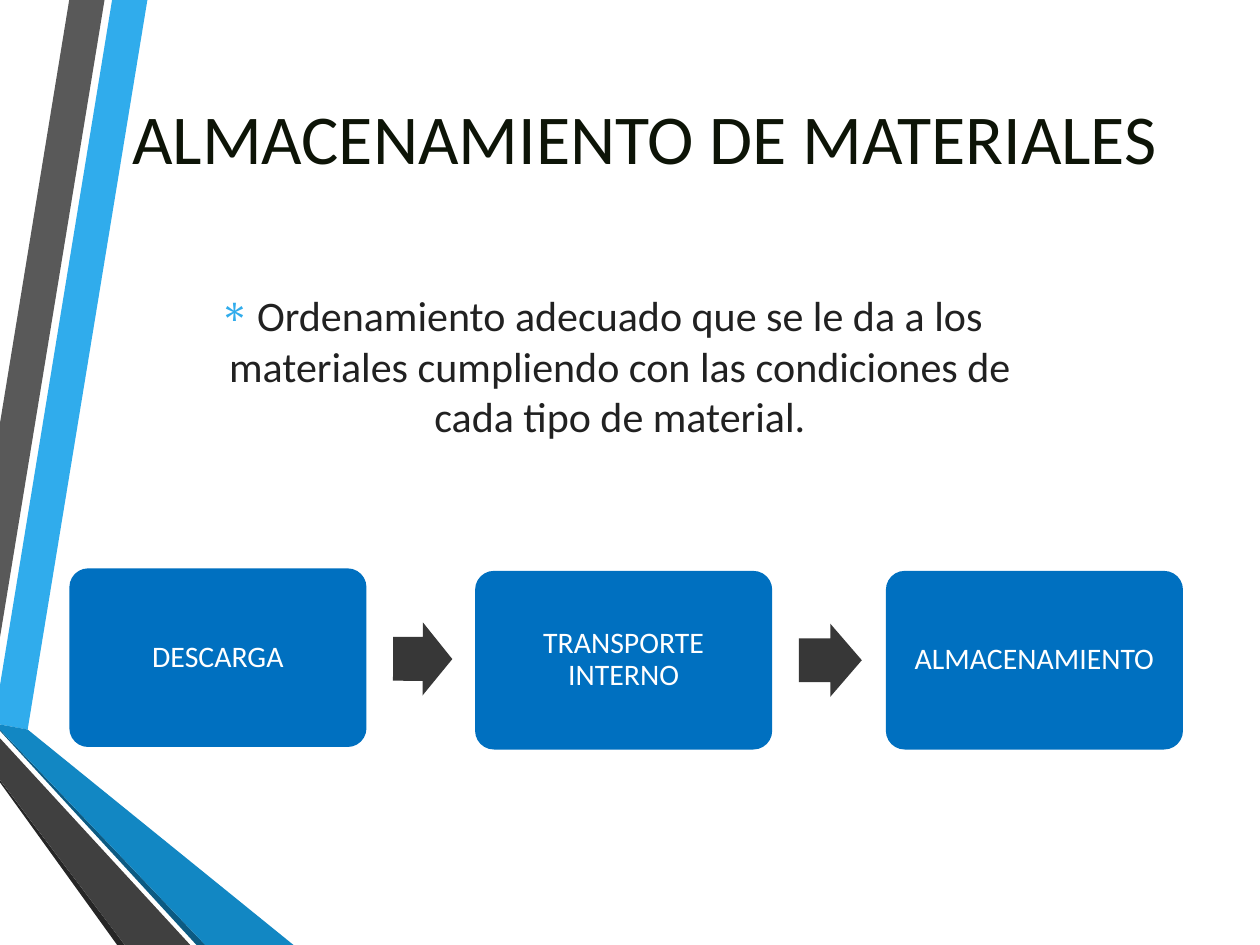
from dataclasses import dataclass

from lxml import etree
from pptx import Presentation
from pptx.dml.color import RGBColor
from pptx.enum.shapes import MSO_SHAPE
from pptx.enum.text import MSO_ANCHOR, PP_ALIGN
from pptx.oxml.ns import qn
from pptx.util import Inches, Pt

ROUNDED = MSO_SHAPE.ROUNDED_RECTANGLE
RIGHT_ARROW = MSO_SHAPE.RIGHT_ARROW
CENTER = PP_ALIGN.CENTER
TOP, MIDDLE = MSO_ANCHOR.TOP, MSO_ANCHOR.MIDDLE


@dataclass(frozen=True)
class Theme:
    font: str = "Calibri"
    title_size: int = 40
    body_size: int = 24
    step_size: int = 17
    title: str = "0D1407"
    body: str = "212121"
    step_text: str = "FFFFFF"
    step: str = "0070C0"
    arrow: str = "373737"
    bullet: str = "30ACEC"


THEME = Theme()

# Decorative ribbons, back to front: colour and corner points in inches
RIBBONS = [
    ("30ACEC", [(0, 5.44), (0, 5.75), (0.22, 5.79), (1.17, 0), (0.89, 0)]),
    ("595959", [(0.83, 0), (0.55, 0), (0, 3.36), (0, 5.06)]),
    ("262626", [(0, 6.19), (0, 6.21), (0.93, 7.5), (0.99, 7.5)]),
    ("0C5A82", [(0, 5.79), (0, 5.8), (1.56, 7.5), (1.63, 7.5)]),
    ("1287C3", [(0, 5.79), (1.63, 7.5), (2.33, 7.5), (0.22, 5.79), (0, 5.75)]),
    ("404040", [(0, 6.19), (0.99, 7.5), (1.51, 7.5), (0, 5.86)]),
]

# Process steps: label, left, top
STEPS = [
    ("DESCARGA", 0.56, 4.52),
    ("TRANSPORTE INTERNO", 3.78, 4.54),
    ("ALMACENAMIENTO", 7.04, 4.54),
]
STEP_SIZE = (2.34, 1.4)

# Arrows between steps: box and rotation in degrees
ARROWS = [((3.12, 4.94, 0.47, 0.58), 0.3), ((6.34, 4.95, 0.5, 0.58), 0)]


def paint(shape, fill, line=None):
    shape.shadow.inherit = False
    shape.fill.solid()
    shape.fill.fore_color.rgb = RGBColor.from_string(fill)
    if line:
        shape.line.color.rgb = RGBColor.from_string(line)
        shape.line.width = Pt(1.25)
    else:
        shape.line.fill.background()


def write_text(shape, text, *, size, color, anchor=MIDDLE, inset=None,
               line_spacing=None, space_before=None):
    frame = shape.text_frame
    frame.word_wrap = True
    frame.vertical_anchor = anchor
    if inset is not None:
        frame.margin_left = frame.margin_right = Inches(inset)
        frame.margin_top = frame.margin_bottom = Inches(inset)
    paragraph = frame.paragraphs[0]
    paragraph.alignment = CENTER
    paragraph.line_spacing = line_spacing
    if space_before is not None:
        paragraph.space_before = Pt(space_before)
    run = paragraph.add_run()
    run.text = text
    run.font.name = THEME.font
    run.font.size = Pt(size)
    run.font.color.rgb = RGBColor.from_string(color)
    return paragraph


def add_bullet(paragraph, character, color, indent):
    properties = paragraph._p.get_or_add_pPr()
    properties.set("marL", str(Inches(indent)))
    properties.set("indent", str(-Inches(indent)))
    bullet_color = etree.SubElement(properties, qn("a:buClr"))
    etree.SubElement(bullet_color, qn("a:srgbClr"), val=color)
    etree.SubElement(properties, qn("a:buChar"), char=character)


def add_ribbons(slide):
    for color, points in RIBBONS:
        start, *others = [(Inches(x), Inches(y)) for x, y in points]
        builder = slide.shapes.build_freeform(*start, scale=1.0)
        builder.add_line_segments(others, close=True)
        paint(builder.convert_to_shape(), color)


def add_title(slide, box):
    shape = slide.shapes.add_textbox(*map(Inches, box))
    write_text(shape, "ALMACENAMIENTO DE MATERIALES",
               size=THEME.title_size, color=THEME.title)


def add_definition(slide, box):
    shape = slide.shapes.add_textbox(*map(Inches, box))
    paragraph = write_text(
        shape,
        "Ordenamiento adecuado que se le da a los materiales cumpliendo "
        "con las condiciones de cada tipo de material.",
        size=THEME.body_size, color=THEME.body, anchor=TOP, space_before=5)
    add_bullet(paragraph, "∗", THEME.bullet, indent=0.3)


def add_step(slide, box, label):
    shape = slide.shapes.add_shape(ROUNDED, *map(Inches, box))
    shape.adjustments[0] = 0.1
    paint(shape, THEME.step, THEME.step)
    write_text(shape, label, size=THEME.step_size, color=THEME.step_text,
               inset=0.07, line_spacing=0.9)


def add_arrow(slide, box, rotation):
    shape = slide.shapes.add_shape(RIGHT_ARROW, *map(Inches, box))
    shape.adjustments[0] = 0.6
    shape.adjustments[1] = 0.5
    shape.rotation = rotation
    paint(shape, THEME.arrow)


def main():
    presentation = Presentation()
    presentation.slide_width = Inches(10)
    presentation.slide_height = Inches(7.5)
    slide = presentation.slides.add_slide(presentation.slide_layouts[6])

    # Background and text
    add_ribbons(slide)
    add_title(slide, (0.9, 0, 8.43, 2.17))
    add_definition(slide, (1.14, 2.25, 7.26, 1.91))

    # Process flow
    for label, left, top in STEPS:
        add_step(slide, (left, top, *STEP_SIZE), label)
    for box, rotation in ARROWS:
        add_arrow(slide, box, rotation)

    presentation.save("out.pptx")


if __name__ == "__main__":
    main()
